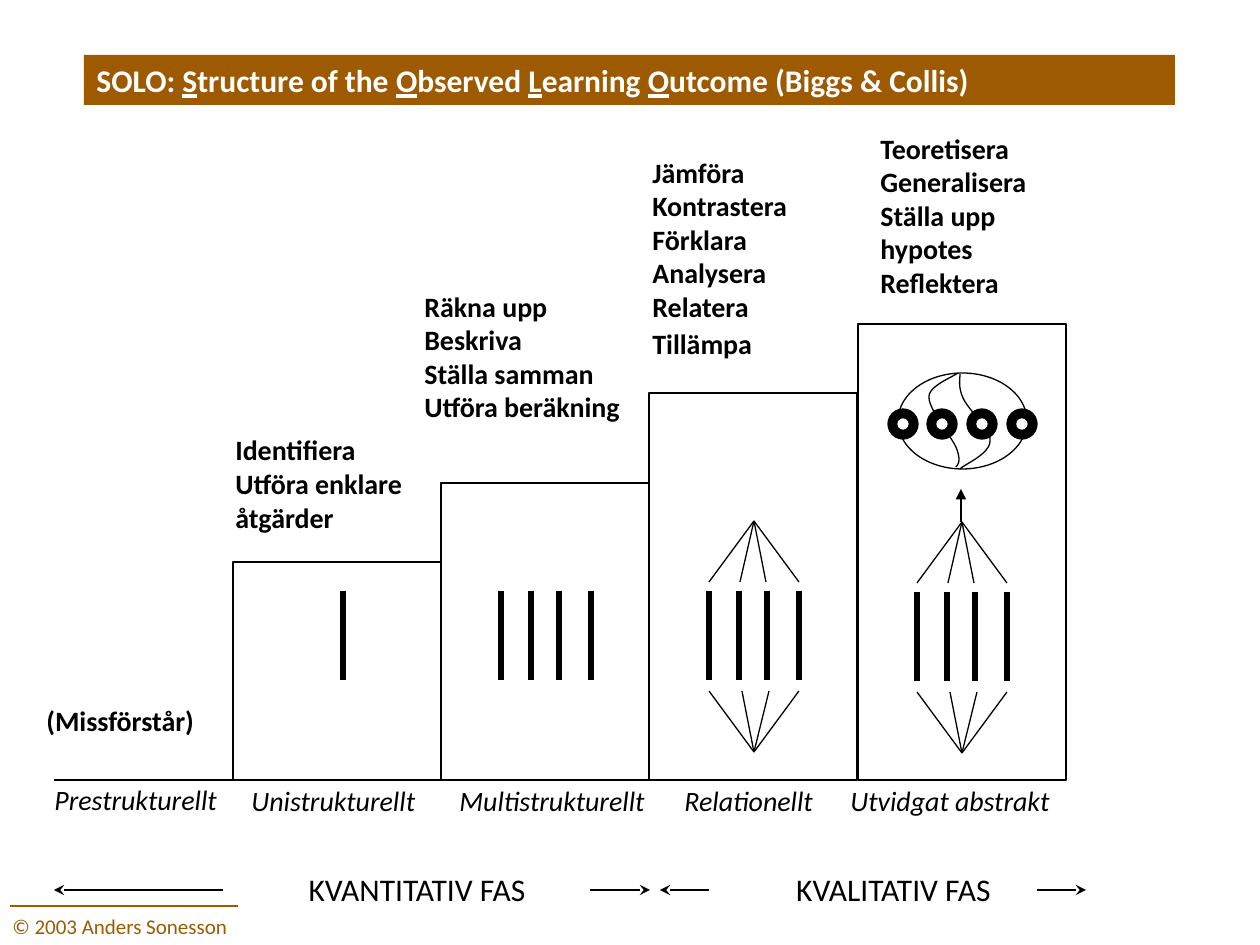
from dataclasses import dataclass

from lxml import etree
from pptx import Presentation
from pptx.dml.color import RGBColor
from pptx.enum.shapes import MSO_CONNECTOR, MSO_SHAPE
from pptx.enum.text import MSO_ANCHOR, MSO_AUTO_SIZE, PP_ALIGN
from pptx.oxml.ns import qn
from pptx.util import Pt

EMU_PER_PX = 914400 / 126


def px(length):
    return round(length * EMU_PER_PX)


@dataclass(frozen=True)
class Theme:
    font: str = "Calibri"
    ink: RGBColor = RGBColor(0x00, 0x00, 0x00)
    paper: RGBColor = RGBColor(0xFF, 0xFF, 0xFF)
    accent: RGBColor = RGBColor(0x9E, 0x5A, 0x00)
    heading: int = 18
    body: int = 16
    footer: int = 12
    thin: float = 0.75
    thick: float = 3


@dataclass
class Canvas:
    slide: object
    theme: Theme

    def line(self, start, end, weight=None, color=None, arrow=None):
        connector = self.slide.shapes.add_connector(
            MSO_CONNECTOR.STRAIGHT, *map(px, (*start, *end)))
        connector.line.color.rgb = color or self.theme.ink
        connector.line.width = Pt(weight or self.theme.thin)
        properties = connector._element.spPr
        if arrow:
            etree.SubElement(properties.find(qn("a:ln")), qn("a:tailEnd"), type=arrow)
        etree.SubElement(properties, qn("a:effectLst"))

    def outline(self, shape, fill, line):
        shape.shadow.inherit = False
        if fill is None:
            shape.fill.background()
        else:
            shape.fill.solid()
            shape.fill.fore_color.rgb = fill
        if line is None:
            shape.line.fill.background()
        else:
            shape.line.color.rgb = line
            shape.line.width = Pt(self.theme.thin)
        return shape

    def shape(self, kind, box, fill=None, line=None):
        return self.outline(self.slide.shapes.add_shape(kind, *map(px, box)), fill, line)

    def curve(self, start, *segments, steps=12):
        """Draw a chain of cubic curves, each given as two controls and an end."""
        points, last = [], start
        for segment in segments:
            for step in range(1, steps + 1):
                t = step / steps
                weights = ((1 - t) ** 3, 3 * t * (1 - t) ** 2, 3 * t * t * (1 - t), t ** 3)
                points.append(tuple(
                    px(sum(w * p[axis] for w, p in zip(weights, (last, *segment))))
                    for axis in (0, 1)))
            last = segment[-1]
        builder = self.slide.shapes.build_freeform(*map(px, start))
        builder.add_line_segments(points, close=False)
        self.outline(builder.convert_to_shape(), None, self.theme.ink)

    def fill_text(self, shape, paragraphs, size, color=None, align=PP_ALIGN.LEFT,
                  wrap=True, bold=False, italic=False):
        """Each paragraph is a list of (text, style changes) runs."""
        frame = shape.text_frame
        frame.word_wrap = wrap
        frame.auto_size = MSO_AUTO_SIZE.SHAPE_TO_FIT_TEXT
        frame.vertical_anchor = MSO_ANCHOR.TOP
        for index, runs in enumerate(paragraphs):
            paragraph = frame.add_paragraph() if index else frame.paragraphs[0]
            paragraph.alignment = align
            for words, changes in runs:
                run = paragraph.add_run()
                run.text = words
                run.font.name = self.theme.font
                run.font.color.rgb = color or self.theme.ink
                run.font.size = Pt(changes.get("size", size))
                run.font.bold = changes.get("bold", bold)
                run.font.italic = italic
                run.font.underline = changes.get("underline", False)

    def text(self, box, lines, size, **style):
        paragraphs = [[(line, {})] if isinstance(line, str) else line for line in lines]
        self.fill_text(self.slide.shapes.add_textbox(*map(px, box)), paragraphs, size, **style)


STROKES = (0, 30, 58, 90)
FAN_TOP = (0, 31, 57, 90)
FAN_BOTTOM = (0, 33, 60, 90)


def draw_strokes(canvas, left, top, offsets=STROKES):
    for offset in offsets:
        canvas.line((left + offset, top), (left + offset, top + 89), canvas.theme.thick)


def draw_related_strokes(canvas, left, top):
    draw_strokes(canvas, left, top)
    for offsets, base, apex in ((FAN_TOP, -9, -70), (FAN_BOTTOM, 100, 161)):
        for offset in offsets:
            canvas.line((left + offset, top + base), (left + 45, top + apex))


def draw_network(canvas):
    ink, paper = canvas.theme.ink, canvas.theme.paper
    canvas.curve((960, 469), ((965, 464), (990, 454), (990, 441)),
                 ((992, 430), (968, 410), (963, 398)),
                 ((958, 387), (960, 379), (960, 374)))
    canvas.curve((956, 467), ((959, 464), (961, 459), (956, 447)),
                 ((951, 436), (929, 410), (929, 397)),
                 ((929, 386), (951, 378), (958, 373)))
    canvas.shape(MSO_SHAPE.OVAL, (898, 373, 129, 96), line=ink)
    for index in range(4):
        left = 888 + 119 * index // 3
        canvas.shape(MSO_SHAPE.OVAL, (left, 409, 30, 30), ink, ink)
        canvas.shape(MSO_SHAPE.OVAL, (left + 10, 419, 10, 10), paper, paper)


def main():
    theme = Theme()
    deck = Presentation()
    deck.slide_width, deck.slide_height = px(1260), px(945)
    canvas = Canvas(deck.slides.add_slide(deck.slide_layouts[6]), theme)

    # Symbols inside the steps
    draw_strokes(canvas, 343, 591, offsets=(0,))
    draw_strokes(canvas, 501, 591)
    draw_related_strokes(canvas, 709, 591)
    draw_related_strokes(canvas, 917, 592)
    draw_network(canvas)
    canvas.line((961, 522), (961, 489), arrow="triangle")

    # Staircase and its baseline
    ground = 780
    for index, top in enumerate((562, 483, 393, 324)):
        canvas.shape(MSO_SHAPE.RECTANGLE,
                     (233 + 625 * index // 3, top, 208, ground - top), line=theme.ink)
    canvas.line((253, ground), (54, ground))

    # Verbs above each step
    gap = (" ", {"size": theme.heading, "bold": False})
    verbs = (
        ((34, 697, 195, 47), ["(Missförstår)"], False),
        ((223, 423, 238, 118), [[("Identifiera", {}), gap], "Utföra enklare åtgärder"], True),
        ((412, 283, 258, 147),
         ["Räkna upp", "Beskriva", "Ställa samman", "Utföra beräkning"], True),
        ((640, 149, 183, 219),
         ["Jämföra", "Kontrastera", "Förklara", "Analysera", "Relatera",
          [("Tillämpa", {}), gap]], False),
        ((868, 125, 198, 181),
         ["Teoretisera", "Generalisera", "Ställa upp hypotes", "Reflektera"], True),
    )
    for box, lines, wrap in verbs:
        canvas.text(box, lines, theme.body, wrap=wrap, bold=True)

    # Level names under the baseline
    levels = ((42, 776, 208, "Prestrukturellt"), (239, 777, 205, "Unistrukturellt"),
              (447, 777, 223, "Multistrukturellt"), (672, 777, 164, "Relationellt"),
              (838, 777, 236, "Utvidgat abstrakt"))
    for left, top, width, level in levels:
        canvas.text((left, top, width, 47), [level], theme.body, wrap=False, italic=True)

    # Phases and their arrows
    for left, width, phase in ((253, 328, "KVANTITATIV FAS"), (740, 307, "KVALITATIV FAS")):
        canvas.text((left, 864, width, 50), [phase], theme.heading, align=PP_ALIGN.CENTER)
    for start, end in ((223, 54), (590, 650), (709, 660), (1037, 1086)):
        canvas.line((start, 890), (end, 890), arrow="stealth")

    # Title bar with underlined initials
    title_bar = canvas.shape(MSO_SHAPE.RECTANGLE, (84, 55, 1091, 50), theme.accent)
    title = ("SOLO: ", "S", "tructure of the ", "O", "bserved ", "L", "earning ", "O",
             "utcome (Biggs & Collis)")
    canvas.fill_text(title_bar, [[(part, {"underline": len(part) == 1}) for part in title]],
                     theme.heading, theme.paper, bold=True)

    # Footer
    canvas.text((0, 907, 267, 38), ["© 2003 Anders Sonesson"], theme.footer,
                color=theme.accent)
    canvas.line((238, 906), (10, 906), color=theme.accent)

    deck.save("out.pptx")


if __name__ == "__main__":
    main()
